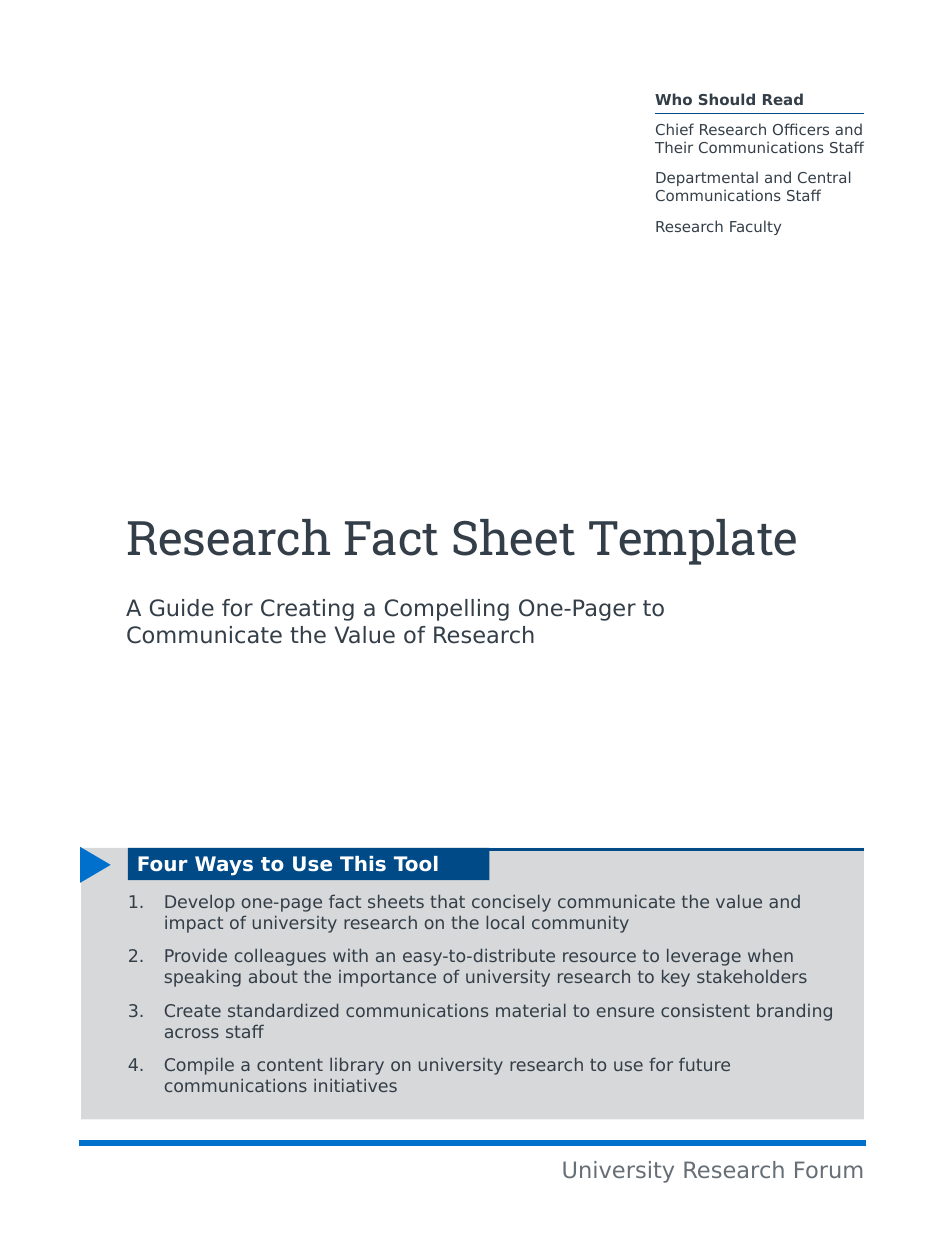
from dataclasses import dataclass

from lxml import etree
from pptx import Presentation
from pptx import util as u
from pptx.dml.color import RGBColor
from pptx.enum import shapes, text
from pptx.oxml.ns import qn


@dataclass(frozen=True)
class Theme:
    """Colours, fonts and type sizes of the cover."""
    ink: str = "333E48"
    muted: str = "666E76"
    navy: str = "004A88"
    blue: str = "0070CD"
    panel: str = "D6D8DA"
    white: str = "FFFFFF"
    body_font: str = "DejaVu Sans"
    title_font: str = "Roboto Slab"
    title: int = 19
    subtitle: int = 9
    heading: int = 8
    item: int = 7
    note: int = 6
    gap: int = 5


class Cover:
    """Draws styled elements on one slide."""

    def __init__(self, slide, theme):
        """Keep the slide and its theme."""
        self.s, self.t = slide, theme

    def text(self, box, lines, size, color=None, font=None, bold_first=False,
             align=None, anchor=text.MSO_ANCHOR.TOP, gap=0, numbered=False):
        """Add a text box with one paragraph per line."""
        tf = self.s.shapes.add_textbox(*map(u.Inches, box)).text_frame
        tf.margin_left = tf.margin_right = tf.margin_top = tf.margin_bottom = 0
        tf.word_wrap = True
        tf.auto_size = text.MSO_AUTO_SIZE.SHAPE_TO_FIT_TEXT
        tf.vertical_anchor = anchor
        tf.text = "\n".join(lines)
        for i, p in enumerate(tf.paragraphs):
            p.alignment = align
            p.space_before = u.Pt(gap)
            if numbered:
                self.number(p)
            f = p.runs[0].font
            f.name, f.size = font or self.t.body_font, u.Pt(size)
            f.bold = bold_first and i == 0
            f.color.rgb = RGBColor.from_string(color or self.t.ink)

    def number(self, p, indent=0.2):
        """Give a paragraph an automatic number and a hanging indent."""
        pPr = p._p.get_or_add_pPr()
        pPr.set("marL", str(u.Inches(indent)))
        pPr.set("indent", str(-u.Inches(indent)))
        etree.SubElement(pPr, qn("a:buFont")).set("typeface", "+mj-lt")
        etree.SubElement(pPr, qn("a:buAutoNum")).set("type", "arabicPeriod")

    def shape(self, kind, box, color, rotation=0):
        """Add a filled shape without outline."""
        sp = self.s.shapes.add_shape(kind, *map(u.Inches, box))
        sp.shadow.inherit = False
        sp.fill.solid()
        sp.fill.fore_color.rgb = RGBColor.from_string(color)
        sp.line.fill.background()
        sp.rotation = rotation

    def rule(self, left, right, y, color, width):
        """Add a horizontal line."""
        ends = map(u.Inches, (left, y, right, y))
        line = self.s.shapes.add_connector(shapes.MSO_CONNECTOR.STRAIGHT, *ends)
        line.line.color.rgb = RGBColor.from_string(color)
        line.line.width = u.Pt(width)
        etree.SubElement(line._element.spPr, qn("a:effectLst"))


def main():
    """Build the cover and save it."""
    prs = Presentation()
    prs.slide_width, prs.slide_height = u.Inches(5.25), u.Inches(7)
    t = Theme()
    c = Cover(prs.slides.add_slide(prs.slide_layouts[6]), t)
    rect = shapes.MSO_SHAPE.RECTANGLE

    c.rule(0.44, 4.81, 6.35, t.blue, 2.25)
    c.text((0.7, 2.5, 3.79, 0.64), ["Research Fact Sheet Template"], t.title,
           font=t.title_font, anchor=text.MSO_ANCHOR.BOTTOM)
    c.text((0.7, 3.3, 3.55, 0.3),
           ["A Guide for Creating a Compelling One-Pager to Communicate the Value of Research"],
           t.subtitle)
    c.text((2.33, 6.42, 2.47, 0.15), ["University Research Forum"], t.subtitle,
           t.muted, align=text.PP_ALIGN.RIGHT)

    c.text((3.64, 0.5, 1.17, 0.82),
           ["Who Should Read",
            "Chief Research Officers and Their Communications Staff",
            "Departmental and Central Communications Staff",
            "Research Faculty"],
           t.note, bold_first=True, gap=t.gap)
    c.rule(3.64, 4.8, 0.63, t.navy, 0.5)

    c.shape(rect, (0.45, 4.71, 4.35, 1.51), t.panel)
    c.rule(0.72, 4.8, 4.72, t.navy, 1.5)
    c.shape(rect, (0.71, 4.71, 2.01, 0.18), t.navy)
    c.text((0.76, 4.73, 1.91, 0.13), ["Four Ways to Use This Tool"], t.heading,
           t.white, bold_first=True, gap=t.gap)
    c.text((0.71, 4.95, 4.05, 1.15),
           ["Develop one-page fact sheets that concisely communicate the value and "
            "impact of university research on the local community",
            "Provide colleagues with an easy-to-distribute resource to leverage when "
            "speaking about the importance of university research to key stakeholders",
            "Create standardized communications material to ensure consistent "
            "branding across staff",
            "Compile a content library on university research to use for future "
            "communications initiatives"],
           t.item, gap=t.gap, numbered=True)
    c.shape(shapes.MSO_SHAPE.ISOSCELES_TRIANGLE, (0.43, 4.72, 0.2, 0.17), t.blue, 90)

    prs.save("out.pptx")


if __name__ == "__main__":
    main()
